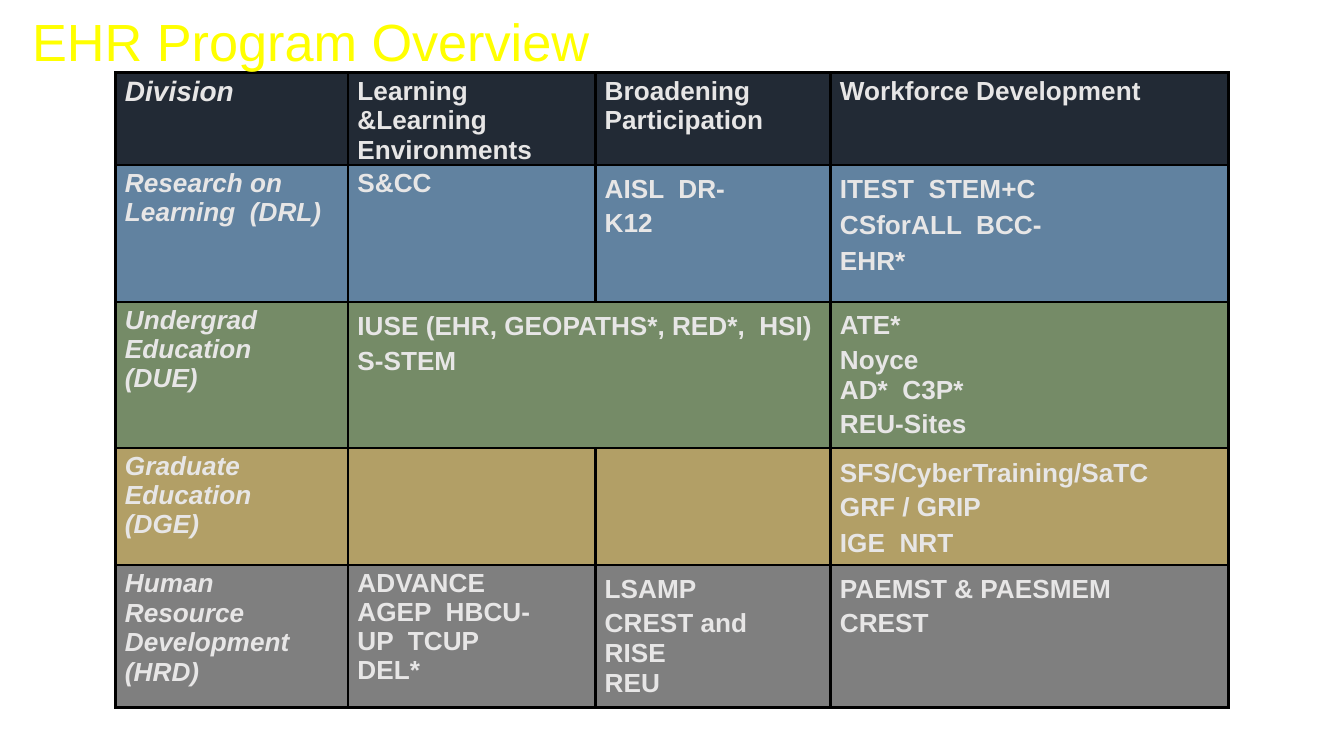
from lxml.etree import SubElement
from pptx import Presentation
from pptx.dml.color import RGBColor
from pptx.enum.text import MSO_ANCHOR, PP_ALIGN
from pptx.oxml.ns import qn
from pptx.util import Inches, Pt

TITLE = "EHR Program Overview"
LIGHT = "E7E6E6"
COLS = [1.73, 1.84, 1.75, 2.96]

# Row: height, fill, cells. Cell: top inset, paragraphs.
# Paragraph: text, line spacing, right indent.
ROWS = [
    (0.5, "222A35", [
        (0.03, [("Division", 1, 0)]),
        (0.03, [("Learning &Learning Environments", 1, 0)]),
        (0.03, [("Broadening Participation", 1, 0)]),
        (0.03, [("Workforce Development", 1, 0)]),
    ]),
    (1.02, "6182A0", [
        (0.03, [("Research on  Learning  (DRL)", 0.99, 0)]),
        (0.03, [("S&CC", 1, 0)]),
        (0.04, [("AISL  DR-K12", 1.16, 0.6)]),
        (0.04, [("ITEST  STEM+C", 1.16, 1.15),
                ("CSforALL  BCC-EHR*", 1.23, 1.15)]),
    ]),
    (1.09, "758B67", [
        (0.03, [("Undergrad  Education  (DUE)", 0.99, 0.2)]),
        (0.04, [("IUSE (EHR, GEOPATHS*, RED*,  HSI)", 1.16, 0),
                ("S-STEM", 1.19, 0)]),
        (0, []),
        (0.03, [("ATE*", 1.18, 0), ("Noyce", 1.18, 0),
                ("AD*  C3P*", 1.02, 0), ("REU-Sites", 1.16, 0)]),
    ]),
    (0.87, "B29F66", [
        (0.03, [("Graduate  Education  (DGE)", 0.99, 0.2)]),
        (0, []),
        (0, []),
        (0.04, [("SFS/CyberTraining/SaTC  GRF / GRIP", 1.16, 0),
                ("IGE  NRT", 1.23, 0)]),
    ]),
    (1.06, "7F7F7F", [
        (0.03, [("Human  Resource  Development  (HRD)", 1, 0.2)]),
        (0.03, [("ADVANCE  AGEP  HBCU-UP  TCUP  DEL*", 0.99, 0.4)]),
        (0.03, [("LSAMP", 1.18, 0), ("CREST and", 1.18, 0),
                ("RISE  REU", 1.02, 0.95)]),
        (0.04, [("PAEMST & PAESMEM  CREST", 1.16, 0.4)]),
    ]),
]


def rgb(color):
    return RGBColor.from_string(color)


def indent(para, left, right=0):
    props = para._p.get_or_add_pPr()
    props.set("marL", str(Inches(left)))
    props.set("marR", str(Inches(right)))


def style(font, size, color):
    font.name = "Arial"
    font.size = Pt(size)
    font.color.rgb = rgb(color)


def border(cell):
    props = cell._tc.get_or_add_tcPr()
    for side in ("lnL", "lnR", "lnT", "lnB"):
        line = SubElement(props, qn(f"a:{side}"), w=str(Pt(1.5)))
        fill = SubElement(line, qn("a:solidFill"))
        SubElement(fill, qn("a:srgbClr"), val="000000")


def write(cell, paras, size, italic):
    frame = cell.text_frame
    for i, (text, space, right) in enumerate(paras):
        para = frame.add_paragraph() if i else frame.paragraphs[0]
        para.text = text
        indent(para, 0.07, right)
        para.line_spacing = space
        style(para.font, size, LIGHT)
        para.font.bold = True
        para.font.italic = italic


prs = Presentation()
prs.slide_width = Inches(10)
prs.slide_height = prs.slide_width * 9 // 16
slide = prs.slides.add_slide(prs.slide_layouts[6])

table = slide.shapes.add_table(
    len(ROWS), len(COLS), Inches(0.86), Inches(0.54),
    Inches(sum(COLS)), Inches(sum(row[0] for row in ROWS))).table
table.first_row = table.horz_banding = False
for col, width in zip(table.columns, COLS):
    col.width = Inches(width)

for r, (height, color, cells) in enumerate(ROWS):
    table.rows[r].height = Inches(height)
    for c, (top, paras) in enumerate(cells):
        cell = table.cell(r, c)
        cell.margin_left = cell.margin_right = cell.margin_bottom = 0
        cell.margin_top = Inches(top)
        border(cell)
        cell.fill.solid()
        cell.fill.fore_color.rgb = rgb(color)
        write(cell, paras, 15 if r == c == 0 else 14, c == 0)
table.cell(2, 1).merge(table.cell(2, 2))
table.cell(3, 0).text_frame.paragraphs[0].alignment = PP_ALIGN.JUSTIFY

title = slide.shapes.add_textbox(
    Inches(0.23), Inches(0.06), Inches(4.27), Inches(0.48)).text_frame
title.word_wrap = True
title.vertical_anchor = MSO_ANCHOR.MIDDLE
title.margin_left = title.margin_right = title.margin_bottom = 0
title.margin_top = Inches(0.01)
title.text = TITLE
indent(title.paragraphs[0], 0.01)
style(title.paragraphs[0].font, 28, "FFFF00")

prs.save("out.pptx")
